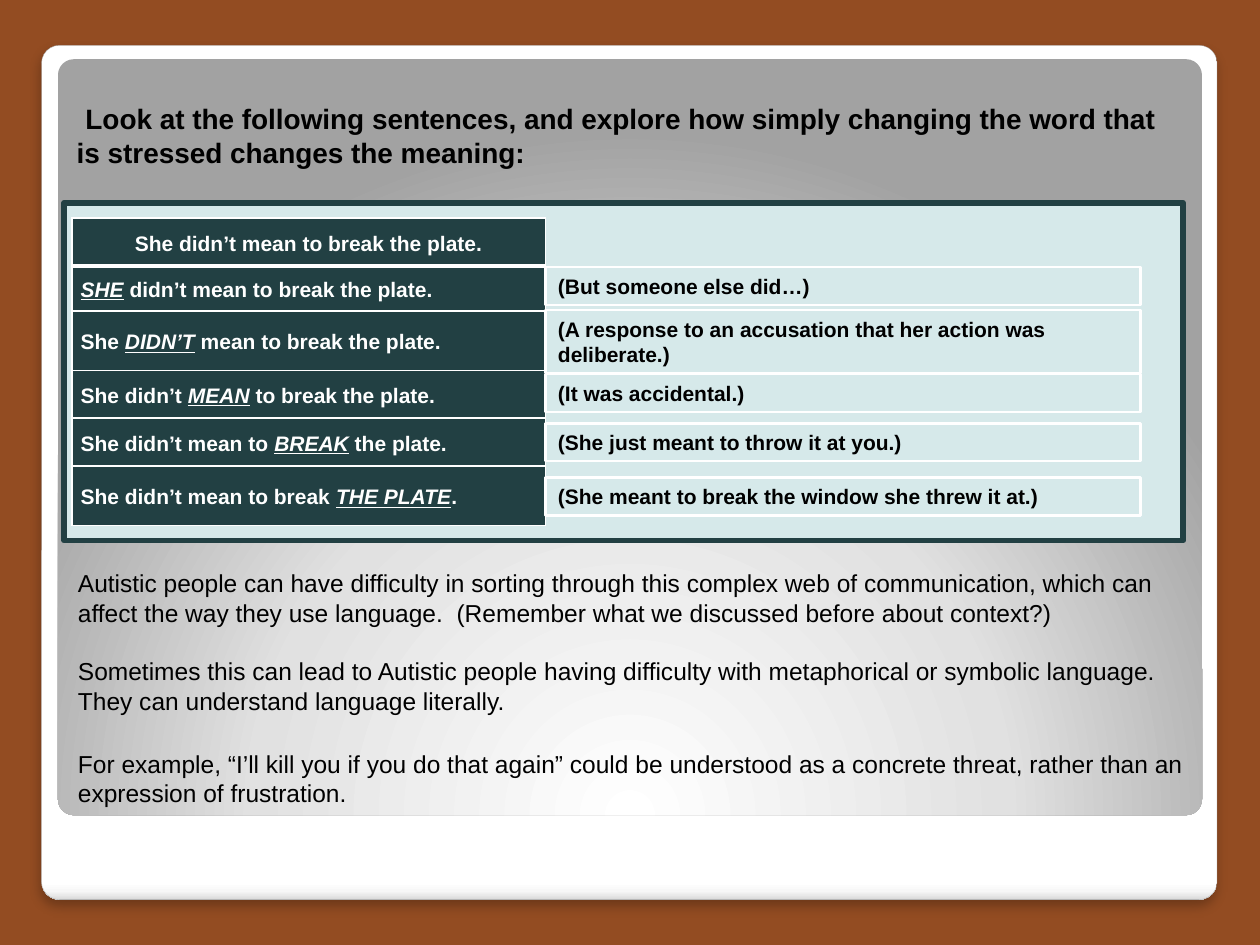
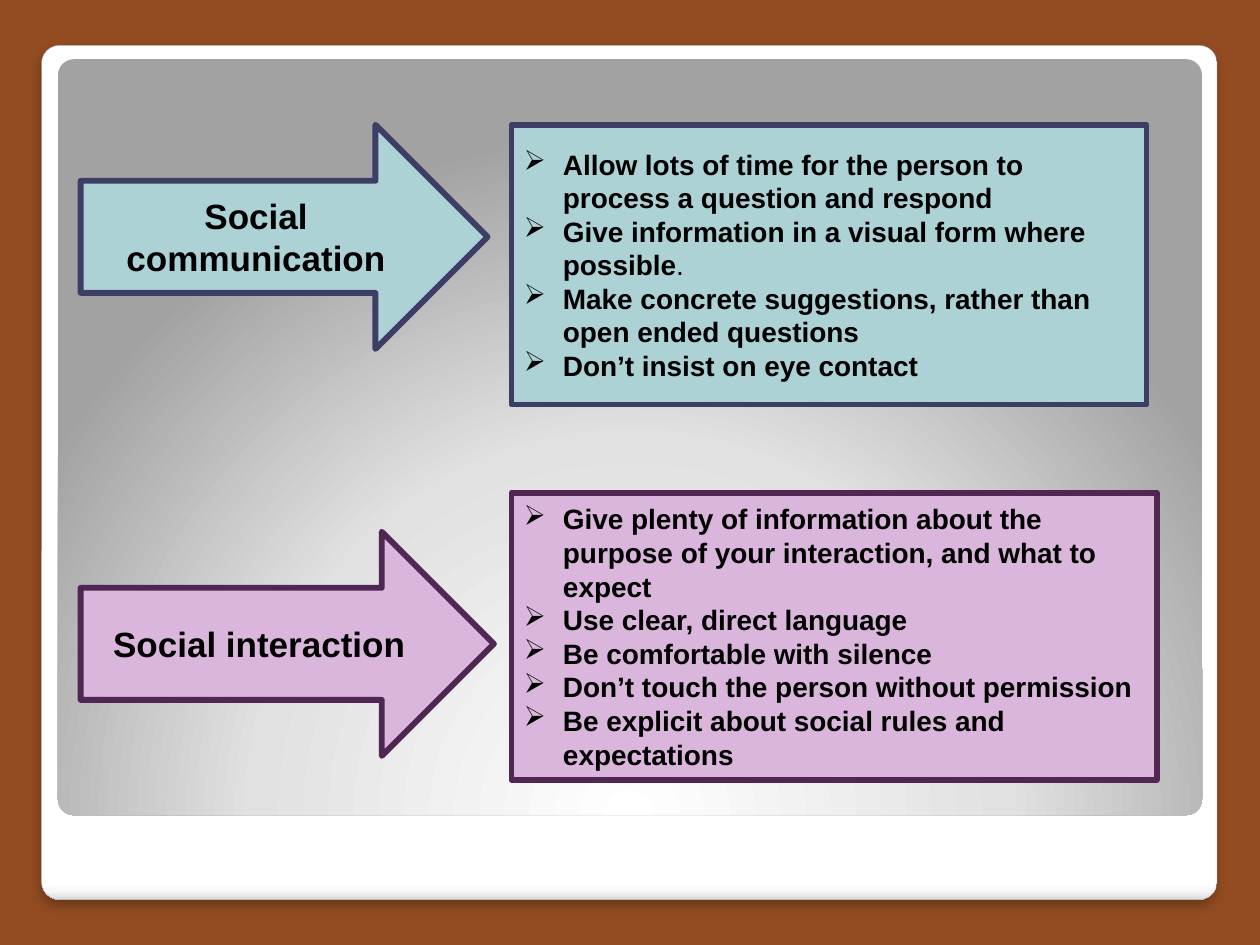
from dataclasses import dataclass

from lxml import etree
from pptx import Presentation, util as u
from pptx.dml.color import RGBColor
from pptx.enum import shapes, text
from pptx.oxml import parse_xml
from pptx.oxml.ns import nsdecls, qn
from pptx.shapes.autoshape import Shape
from pptx.slide import Slide
from pptx.text.text import TextFrame, _Paragraph

FONT = "Arial"
BLACK = RGBColor(0x00, 0x00, 0x00)
WHITE = RGBColor(0xFF, 0xFF, 0xFF)
RUST = RGBColor(0x93, 0x4C, 0x22)
EDGE_GREY = RGBColor(0xA4, 0xA4, 0xA4)
DARK_TEAL = RGBColor(0x22, 0x40, 0x43)
PALE_TEAL = RGBColor(0xD6, 0xE9, 0xEA)
TEAL = RGBColor(0xAD, 0xD2, 0xD6)
NAVY = RGBColor(0x3D, 0x3E, 0x66)
LILAC = RGBColor(0xDB, 0xB6, 0xDC)
PLUM = RGBColor(0x50, 0x26, 0x52)
FRAME_LINE = 3.35
CORNER = 0.021

CARD_STOPS = [(0, "FFFFFF"), (98, "FFFFFF"), (99, "F7F7F7"), (100, "DADADA")]
PANEL_STOPS = [(0, "FFFFFF"), (55, "E1E1E1"), (100, "A2A2A2")]
CARD_SHADE = '<a:lin ang="5400000" scaled="0"/>'
PANEL_SHADE = ('<a:path path="circle">'
               '<a:fillToRect l="50000" t="175000" r="50000" b="-75000"/></a:path>')


@dataclass(frozen=True)
class Area:
    left: float
    top: float
    width: float
    height: float

    def inches(self) -> list[u.Length]:
        return [u.Inches(v) for v in (self.left, self.top, self.width, self.height)]


@dataclass(frozen=True)
class Reply:
    """A meaning beside a stressed sentence."""
    top: float
    height: float
    words: str


@dataclass(frozen=True)
class Topic:
    """An arrow with its box of advice."""
    name: str
    arrow: Area
    box: Area
    fill: RGBColor
    line: RGBColor
    advice: list[str]


SENTENCES = [  # row height, words with the stressed ones between asterisks
    (0.38, "She didn’t mean to break the plate."),
    (0.36, "*SHE* didn’t mean to break the plate."),
    (0.47, "She *DIDN’T* mean to break the plate."),
    (0.38, "She didn’t *MEAN* to break the plate."),
    (0.38, "She didn’t mean to *BREAK* the plate."),
    (0.47, "She didn’t mean to break *THE PLATE*."),
]
REPLIES = [
    Reply(2.12, 0.3, "(But someone else did…)"),
    Reply(2.46, 0.5, "(A response to an accusation that her action was deliberate.)"),
    Reply(2.97, 0.3, "(It was accidental.)"),
    Reply(3.36, 0.3, "(She just meant to throw it at you.)"),
    Reply(3.79, 0.3, "(She meant to break the window she threw it at.)"),
]
HEADING = ("Look at the following sentences, and explore how simply changing "
           "the word that is stressed changes the meaning:")
REMARKS = [  # space before in points, words
    (0, "Autistic people can have difficulty in sorting through this complex web of "
        "communication, which can affect the way they use language.  "
        "(Remember what we discussed before about context?)"),
    (16.8, "Sometimes this can lead to Autistic people having difficulty with "
           "metaphorical or symbolic language.  They can understand language literally."),
    (19.2, "For example, “I’ll kill you if you do that again” could be understood as "
           "a concrete threat, rather than an expression of frustration."),
]
TOPICS = [
    Topic("Social communication", Area(0.64, 0.99, 3.23, 1.78),
          Area(4.06, 0.99, 5.04, 2.22), TEAL, NAVY,
          ["Allow lots of time for the person to process a question and respond",
           "Give information in a visual form where possible.",
           "Make concrete suggestions, rather than open ended questions",
           "Don’t insist on eye contact"]),
    Topic("Social interaction", Area(0.64, 4.22, 3.28, 1.78),
          Area(4.06, 3.91, 5.12, 2.28), LILAC, PLUM,
          ["Give plenty of information about the purpose of your interaction, "
           "and what to expect",
           "Use clear, direct language",
           "Be comfortable with silence",
           "Don’t touch the person without permission",
           "Be explicit about social rules and expectations"]),
]


# Shared drawing helpers
def add_shape(page: Slide, kind: shapes.MSO_SHAPE, area: Area, fill: RGBColor | None = None,
              line: RGBColor | None = None, weight: float = FRAME_LINE) -> Shape:
    shape = page.shapes.add_shape(kind, *area.inches())
    shape.shadow.inherit = False
    if fill is None:
        shape.fill.background()
    else:
        shape.fill.solid()
        shape.fill.fore_color.rgb = fill
    if line is None:
        shape.line.fill.background()
    else:
        shape.line.color.rgb = line
        shape.line.width = u.Pt(weight)
    return shape


def shade(shape: Shape, stops: list[tuple[int, str]], direction: str) -> None:
    """Replace the empty fill of a shape by a gradient."""
    marks = "".join(f'<a:gs pos="{pos * 1000}"><a:srgbClr val="{color}"/></a:gs>'
                    for pos, color in stops)
    gradient = parse_xml(f'<a:gradFill {nsdecls("a")} rotWithShape="1">'
                         f'<a:gsLst>{marks}</a:gsLst>{direction}</a:gradFill>')
    properties = shape._element.spPr
    properties.replace(properties.find(qn("a:noFill")), gradient)


def style(para: _Paragraph, size: float, color: RGBColor = BLACK, bold: bool = False,
          align: text.PP_ALIGN = text.PP_ALIGN.LEFT) -> None:
    para.alignment = align
    para.font.name = FONT
    para.font.size = u.Pt(size)
    para.font.bold = bold
    para.font.color.rgb = color


def indent(para: _Paragraph, margin: float, first: float) -> None:
    properties = para._p.get_or_add_pPr()
    properties.set("marL", str(u.Inches(margin)))
    properties.set("indent", str(u.Inches(first)))


def next_para(frame: TextFrame, index: int) -> _Paragraph:
    return frame.paragraphs[0] if index == 0 else frame.add_paragraph()


def add_text_frame(page: Slide, area: Area) -> TextFrame:
    frame = page.shapes.add_textbox(*area.inches()).text_frame
    frame.word_wrap = True
    return frame


def add_page(deck: Presentation) -> Slide:
    """Add a page with the rust ground, the white card and the grey panel."""
    page = deck.slides.add_slide(deck.slide_layouts[6])
    page.background.fill.solid()
    page.background.fill.fore_color.rgb = RUST
    rounded = shapes.MSO_SHAPE.ROUNDED_RECTANGLE
    card = add_shape(page, rounded, Area(0.33, 0.36, 9.33, 6.78), line=EDGE_GREY, weight=0.16)
    panel = add_shape(page, rounded, Area(0.46, 0.47, 9.08, 6))
    for shape in (card, panel):
        shape.adjustments[0] = CORNER
    shade(card, CARD_STOPS, CARD_SHADE)
    shade(panel, PANEL_STOPS, PANEL_SHADE)
    card._element.spPr.find(qn("a:effectLst")).append(parse_xml(
        f'<a:outerShdw {nsdecls("a")} blurRad="{u.Pt(6)}" dist="{u.Pt(4)}" dir="5400000" '
        'algn="tl" rotWithShape="0"><a:srgbClr val="000000"><a:alpha val="25000"/>'
        '</a:srgbClr></a:outerShdw>'))
    return page


# Stressed sentences
def set_borders(cell, top: float, bottom: float) -> None:
    properties = cell._tc.get_or_add_tcPr()
    for index, (side, weight) in enumerate(
            [("L", 1), ("R", 1), ("T", top), ("B", bottom)]):
        border = etree.Element(qn(f"a:ln{side}"), w=str(u.Pt(weight)))
        fill = etree.SubElement(border, qn("a:solidFill"))
        etree.SubElement(fill, qn("a:srgbClr"), val=str(WHITE))
        properties.insert(index, border)


def add_sentence_table(page: Slide, area: Area) -> None:
    table = page.shapes.add_table(len(SENTENCES), 1, *area.inches()).table
    table.columns[0].width = u.Inches(area.width)
    for index, (height, sentence) in enumerate(SENTENCES):
        table.rows[index].height = u.Inches(height)
        cell = table.cell(index, 0)
        cell.fill.solid()
        cell.fill.fore_color.rgb = DARK_TEAL
        cell.vertical_anchor = text.MSO_ANCHOR.MIDDLE
        cell.margin_left = cell.margin_right = u.Inches(0.07)
        cell.margin_top = cell.margin_bottom = u.Inches(0)
        set_borders(cell, top=3 if index == 1 else 1, bottom=3 if index == 0 else 1)
        para = cell.text_frame.paragraphs[0]
        style(para, 12, WHITE, bold=True,
              align=text.PP_ALIGN.CENTER if index == 0 else text.PP_ALIGN.LEFT)
        para.line_spacing = 1.15
        for part, words in enumerate(sentence.split("*")):
            if words:
                span = para.add_run()
                span.text = words
                span.font.italic = span.font.underline = part % 2 == 1


def build_stress_page(deck: Presentation) -> None:
    page = add_page(deck)
    rectangle = shapes.MSO_SHAPE.RECTANGLE
    add_shape(page, rectangle, Area(0.51, 1.61, 8.88, 2.68), PALE_TEAL, DARK_TEAL)

    heading = add_text_frame(page, Area(0.51, 0.76, 8.98, 0.67)).paragraphs[0]
    heading.text = HEADING
    style(heading, 16, bold=True)
    indent(heading, 0, 0.07)

    add_sentence_table(page, Area(0.57, 1.73, 3.76, 2.44))

    remarks = add_text_frame(page, Area(0.52, 4.46, 8.98, 2.02))
    for index, (gap, words) in enumerate(REMARKS):
        para = next_para(remarks, index)
        para.text = words
        para.space_before = u.Pt(gap)
        style(para, 14)

    for reply in REPLIES:
        box = add_shape(page, rectangle, Area(4.33, reply.top, 4.72, reply.height),
                        line=WHITE, weight=1.5)
        box.text_frame.word_wrap = True
        box.text_frame.vertical_anchor = text.MSO_ANCHOR.TOP
        para = box.text_frame.paragraphs[0]
        para.text = reply.words
        style(para, 12, bold=True)


# Advice by topic
def add_topic(page: Slide, topic: Topic) -> None:
    arrow = add_shape(page, shapes.MSO_SHAPE.RIGHT_ARROW, topic.arrow, topic.fill, topic.line)
    box = add_shape(page, shapes.MSO_SHAPE.RECTANGLE, topic.box, topic.fill, topic.line)
    for shape in (arrow, box):
        shape.text_frame.word_wrap = True
        shape.text_frame.vertical_anchor = text.MSO_ANCHOR.MIDDLE
    name = arrow.text_frame.paragraphs[0]
    name.text = topic.name
    style(name, 20, bold=True, align=text.PP_ALIGN.CENTER)

    for index, words in enumerate(topic.advice):
        para = next_para(box.text_frame, index)
        para.text = words.removesuffix(".")
        style(para, 16, bold=True)
        indent(para, 0.31, -0.31)
        bullet = etree.Element(qn("a:buChar"), char="➢")
        para._p.pPr.find(qn("a:defRPr")).addprevious(bullet)
        if words.endswith("."):
            stop = para.add_run()
            stop.text = "."
            stop.font.bold = False


def main() -> None:
    deck = Presentation()
    deck.slide_width, deck.slide_height = u.Inches(10), u.Inches(7.5)
    build_stress_page(deck)
    advice_page = add_page(deck)
    for topic in TOPICS:
        add_topic(advice_page, topic)
    deck.save("out.pptx")


if __name__ == "__main__":
    main()
